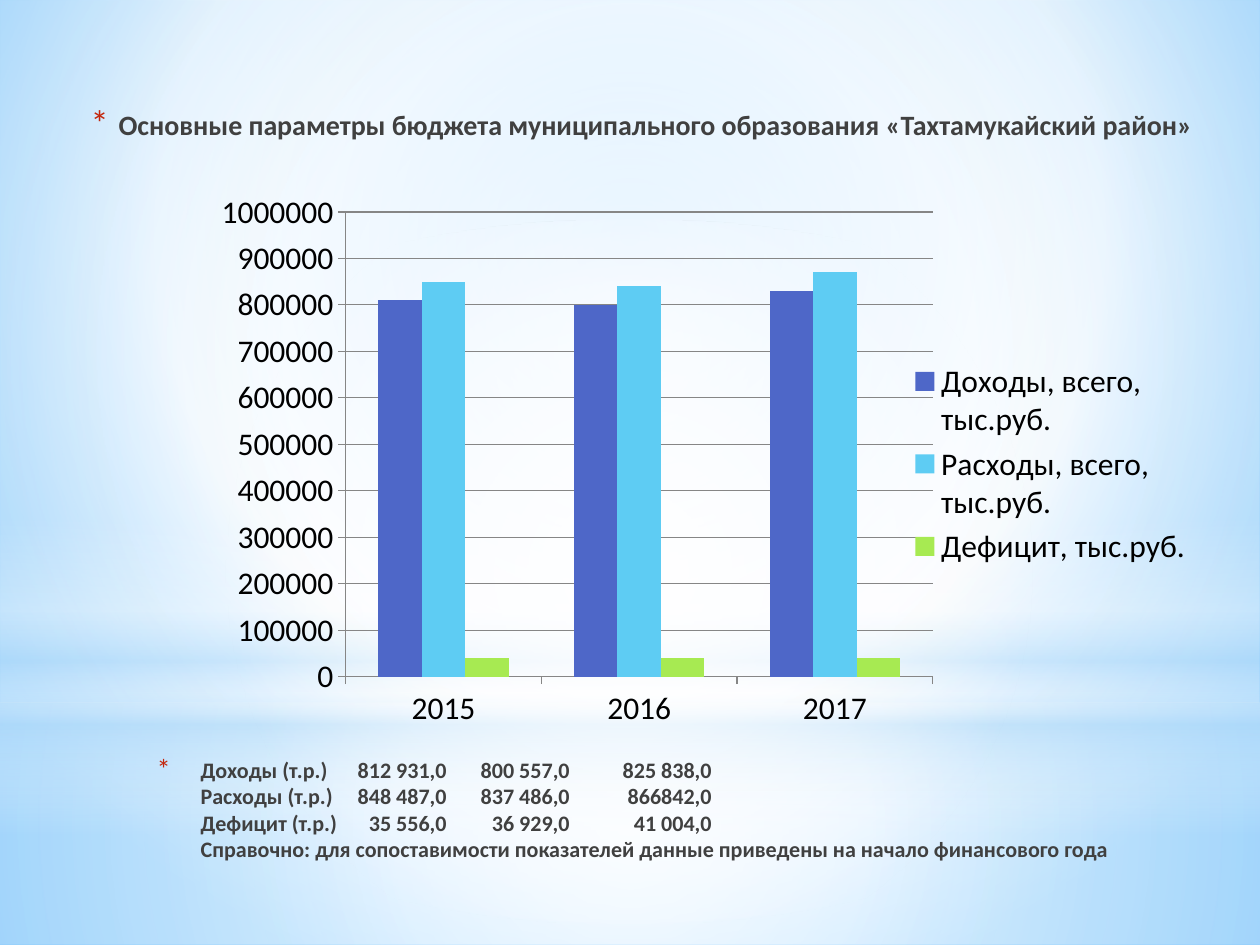
import lxml.etree
import pptx
import pptx.chart.data
import pptx.dml.color
import pptx.enum.chart
import pptx.enum.shapes
import pptx.enum.text
import pptx.oxml
import pptx.oxml.ns
import pptx.util

RGBColor = pptx.dml.color.RGBColor
Pt = pptx.util.Pt
qn = pptx.oxml.ns.qn
ShapeType = pptx.enum.shapes.MSO_SHAPE

PX_PER_INCH = 126
FONT = "Calibri"
WHITE = RGBColor(0xFF, 0xFF, 0xFF)
PALE_BLUE = RGBColor(0xB4, 0xDC, 0xFA)
SKY = RGBColor(0x9E, 0xD5, 0xFF)
DEEP_SKY = RGBColor(0x5B, 0xB9, 0xFF)
TEXT_GREY = RGBColor(0x40, 0x40, 0x40)
BLACK = RGBColor(0x00, 0x00, 0x00)
AXIS_GREY = RGBColor(0x86, 0x86, 0x86)
BULLET_RED = RGBColor(0xC3, 0x26, 0x0C)

YEARS = ["2015", "2016", "2017"]
SERIES = [
    ("Доходы, всего, тыс.руб.", (810000, 800000, 830000), RGBColor(0x4E, 0x67, 0xC8)),
    ("Расходы, всего, тыс.руб.", (850000, 840000, 870000), RGBColor(0x5E, 0xCC, 0xF3)),
    ("Дефицит, тыс.руб.", (40000, 40000, 40000), RGBColor(0xA7, 0xEA, 0x52)),
]
HEADING = "Основные параметры бюджета муниципального образования «Тахтамукайский район»"
SUMMARY_ROWS = [
    ("Доходы (т.р.)", "812 931,0", "800 557,0", "825 838,0"),
    ("Расходы (т.р.)", "848 487,0", "837 486,0", "866842,0"),
    ("Дефицит (т.р.)", "35 556,0", "36 929,0", "41 004,0"),
    ("Справочно: для сопоставимости показателей данные приведены на начало финансового года",),
]
SUMMARY_TABS = (290, 413, 555)


def px(length):
    return round(length * pptx.util.Inches(1) / PX_PER_INCH)


def place(shape, box):
    shape.left, shape.top, shape.width, shape.height = map(px, box)


def gradient(stops, focus=None):
    """Gradient of (percent, colour, opacity) stops: radial at focus, else top to bottom."""
    stop_xml = "".join(
        f'<a:gs pos="{position * 1000}"><a:srgbClr val="{color}">'
        f'<a:alpha val="{opacity * 1000}"/></a:srgbClr></a:gs>'
        for position, color, opacity in stops)
    if focus:
        left, top, right, bottom = (side * 1000 for side in focus)
        shade = (f'<a:path path="circle"><a:fillToRect l="{left}" t="{top}" '
                 f'r="{right}" b="{bottom}"/></a:path>')
    else:
        shade = '<a:lin ang="5400000" scaled="0"/>'
    return pptx.oxml.parse_xml(
        f'<a:gradFill {pptx.oxml.ns.nsdecls("a")} rotWithShape="1">'
        f'<a:gsLst>{stop_xml}</a:gsLst>{shade}</a:gradFill>')


def replace_solid_fill(owner, fill, gradient_fill):
    fill.solid()
    solid = owner.find(".//" + qn("a:solidFill"))
    solid.getparent().replace(solid, gradient_fill)


def add_backdrop(slide, box):
    left, top, width, height = box
    center = (50, 50, 50, 50)
    replace_solid_fill(slide.element, slide.background.fill, gradient(
        [(0, SKY, 100), (60, WHITE, 100), (100, DEEP_SKY, 100)], (20, 10, 20, 60)))
    layers = [
        (ShapeType.RECTANGLE, 703, height - 703, center,
         [(0, WHITE, 91), (37, WHITE, 76), (100, PALE_BLUE, 79)]),
        (ShapeType.RECTANGLE, 0, 703, center,
         [(0, WHITE, 89), (48, WHITE, 62), (100, PALE_BLUE, 79)]),
        (ShapeType.RECTANGLE, 519, 315, None,
         [(0, WHITE, 0), (29, WHITE, 30), (45, PALE_BLUE, 40),
          (55, WHITE, 26), (65, PALE_BLUE, 60), (100, WHITE, 0)]),
        (ShapeType.OVAL, 220, 703, center, [(0, WHITE, 100), (56, WHITE, 0)]),
    ]
    tree = slide.shapes.element
    for index, (kind, offset, layer_height, focus, stops) in enumerate(layers):
        shape = slide.shapes.add_shape(
            kind, px(left), px(top + offset), px(width), px(layer_height))
        shape.shadow.inherit = False
        shape.line.fill.background()
        replace_solid_fill(shape.element, shape.fill, gradient(stops, focus))
        tree.insert(2 + index, shape.element)


def format_bulleted(shape, size, margin, hanging, bullet_percent, tabs=()):
    text_frame = shape.text_frame
    text_frame.word_wrap = True
    text_frame.auto_size = pptx.enum.text.MSO_AUTO_SIZE.NONE
    text_frame.vertical_anchor = pptx.enum.text.MSO_ANCHOR.TOP
    paragraph = text_frame.paragraphs[0]
    paragraph.alignment = pptx.enum.text.PP_ALIGN.LEFT
    for run in paragraph.runs:
        run.font.name = FONT
        run.font.size = Pt(size)
        run.font.bold = True
        run.font.color.rgb = TEXT_GREY
    properties = paragraph._p.get_or_add_pPr()
    properties.set("marL", str(px(margin)))
    properties.set("indent", str(-px(hanging)))
    bullet_color = lxml.etree.SubElement(properties, qn("a:buClr"))
    lxml.etree.SubElement(bullet_color, qn("a:srgbClr"), val=str(BULLET_RED))
    lxml.etree.SubElement(properties, qn("a:buSzPct"), val=str(bullet_percent * 1000))
    lxml.etree.SubElement(properties, qn("a:buFont"), typeface=FONT)
    lxml.etree.SubElement(properties, qn("a:buChar"), char="*")
    if tabs:
        tab_list = lxml.etree.SubElement(properties, qn("a:tabLst"))
        for tab in tabs:
            lxml.etree.SubElement(tab_list, qn("a:tab"), pos=str(px(tab)), algn="r")


def fill_heading(shape, box):
    place(shape, box)
    shape.text_frame.text = HEADING
    format_bulleted(shape, 16, 32, 28, 130)
    paragraph = shape.text_frame.paragraphs[0]
    paragraph.space_before = Pt(3)
    paragraph.space_after = Pt(3)


def fill_summary(shape, box):
    place(shape, box)
    shape.text_frame.text = "\v".join("\t".join(row) for row in SUMMARY_ROWS)
    format_bulleted(shape, 12.6, 44, 47, 128, SUMMARY_TABS)


def set_plot_area(chart, fractions):
    plot_area = chart._chartSpace.chart.plotArea
    layout = plot_area.find(qn("c:layout"))
    if layout is None:
        layout = lxml.etree.Element(qn("c:layout"))
        plot_area.insert(0, layout)
    manual = lxml.etree.SubElement(layout, qn("c:manualLayout"))
    settings = [("layoutTarget", "inner"), ("xMode", "edge"), ("yMode", "edge")]
    settings += zip("xywh", fractions)
    for name, value in settings:
        lxml.etree.SubElement(manual, qn("c:" + name), val=str(value))


def add_budget_chart(slide, box):
    data = pptx.chart.data.CategoryChartData(number_format="General")
    data.categories = YEARS
    for name, values, _ in SERIES:
        data.add_series(name, values)
    chart = slide.shapes.add_chart(
        pptx.enum.chart.XL_CHART_TYPE.COLUMN_CLUSTERED, *map(px, box), data).chart
    chart.has_title = False
    chart.font.name = FONT
    chart.font.size = Pt(18)
    chart.font.color.rgb = BLACK
    chart.has_legend = True
    chart.legend.position = pptx.enum.chart.XL_LEGEND_POSITION.RIGHT
    chart.legend.include_in_layout = False
    plot = chart.plots[0]
    plot.gap_width = 150
    plot.overlap = 0
    plot.vary_by_categories = False
    for series, (_, _, color) in zip(plot.series, SERIES):
        series.format.fill.solid()
        series.format.fill.fore_color.rgb = color
    value_axis = chart.value_axis
    value_axis.minimum_scale = 0
    value_axis.maximum_scale = 1000000
    value_axis.major_unit = 100000
    value_axis.has_major_gridlines = True
    for axis in (chart.category_axis, value_axis):
        axis.major_tick_mark = pptx.enum.chart.XL_TICK_MARK.OUTSIDE
    for lined in (chart.category_axis, value_axis, value_axis.major_gridlines):
        lined.format.line.color.rgb = AXIS_GREY
        lined.format.line.width = Pt(0.75)
    set_plot_area(chart, (0.15, 0.05, 0.58, 0.83))


def main():
    presentation = pptx.Presentation()
    presentation.slide_width = px(1260)
    presentation.slide_height = px(945)
    slide = presentation.slides.add_slide(presentation.slide_layouts[1])
    add_backdrop(slide, (0, 0, 1260, 945))
    fill_summary(slide.shapes.title, (144, 750, 1032, 128))
    fill_heading(slide.placeholders[1], (74, 101, 1152, 479))
    add_budget_chart(slide, (194, 184, 1012, 560))
    presentation.save("out.pptx")


if __name__ == "__main__":
    main()
